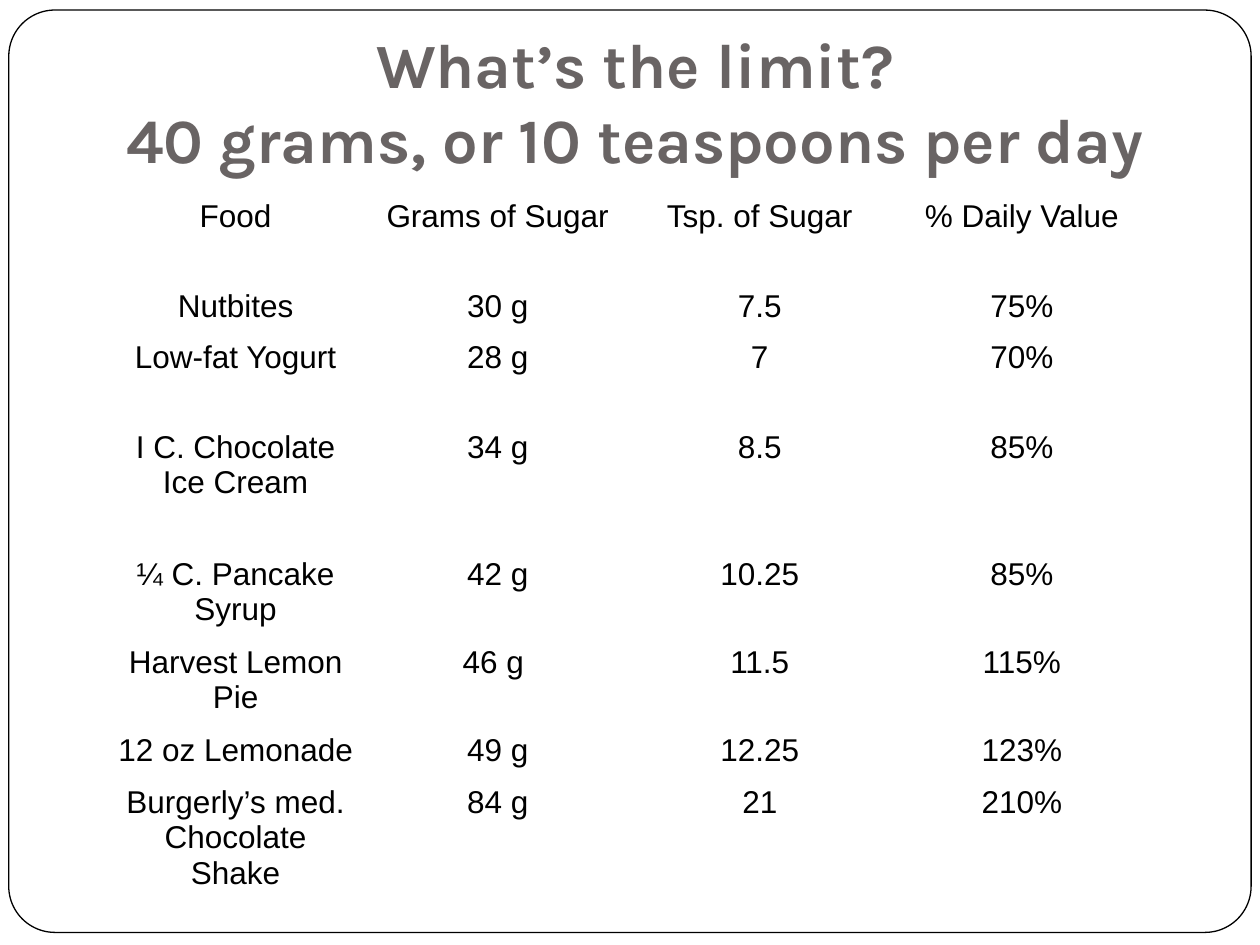
from pptx import Presentation
from pptx.dml.color import RGBColor
from pptx.enum.shapes import MSO_SHAPE
from pptx.enum.text import MSO_ANCHOR, PP_ALIGN
from pptx.util import Inches, Pt

ROUNDED = MSO_SHAPE.ROUNDED_RECTANGLE
BOTTOM = MSO_ANCHOR.BOTTOM
CENTER = PP_ALIGN.CENTER

WIDTH, HEIGHT = 10, 7.5
HEADING = "What’s the limit?\v40 grams, or 10 teaspoons per day"
FOODS = [
    ("Food", "Grams of Sugar", "Tsp. of Sugar", "% Daily Value"),
    ("Nutbites", "30 g", "7.5", "75%"),
    ("Low-fat Yogurt", "28 g", "7", "70%"),
    ("I C. Chocolate Ice Cream", "34 g", "8.5", "85%"),
    ("¼ C. Pancake Syrup", "42 g", "10.25", "85%"),
    ("Harvest Lemon Pie", "46 g ", "11.5", "115%"),
    ("12 oz Lemonade", "49 g", "12.25", "123%"),
    ("Burgerly’s med. Chocolate Shake", "84 g", "21", "210%"),
]
COLUMN_WIDTH, ROW_HEIGHT = 2.08, 0.41
TALL_ROWS = {0: 0.71, 2: 0.71, 3: 1.01}


def rgb(color):
    return RGBColor.from_string(color)


def style(frame, font, size, color, bold):
    for paragraph in frame.paragraphs:
        paragraph.alignment = CENTER
        for run in paragraph.runs:
            run.font.name = font
            run.font.size = Pt(size)
            run.font.bold = bold
            run.font.color.rgb = rgb(color)


def add_border(slide):
    margin = 0.07
    border = slide.shapes.add_shape(
        ROUNDED, Inches(margin), Inches(0.08),
        Inches(WIDTH - 2 * margin), Inches(7.32))
    border.adjustments[0] = 0.05
    border.shadow.inherit = False
    border.fill.solid()
    border.fill.fore_color.rgb = rgb("FFFFFF")
    border.line.color.rgb = rgb("000000")
    border.line.width = Pt(0.75)


def add_heading(slide):
    heading = slide.shapes.add_textbox(
        Inches(0.5), Inches(0.25), Inches(9.08), Inches(1.25)).text_frame
    heading.word_wrap = True
    heading.vertical_anchor = BOTTOM
    heading.margin_bottom = Inches(0.1)
    heading.text = HEADING
    style(heading, "Karla", 36, "696464", True)


def add_foods(slide):
    heights = [TALL_ROWS.get(i, ROW_HEIGHT) for i in range(len(FOODS))]
    columns = len(FOODS[0])
    foods = slide.shapes.add_table(
        len(FOODS), columns, Inches(0.83), Inches(1.53),
        Inches(columns * COLUMN_WIDTH), Inches(sum(heights))).table
    foods.first_row = foods.horz_banding = False
    for row, height, values in zip(foods.rows, heights, FOODS):
        row.height = Inches(height)
        for cell, value in zip(row.cells, values):
            cell.fill.background()
            cell.text_frame.text = value
            style(cell.text_frame, "Arial", 18, "000000", False)


def main():
    deck = Presentation()
    deck.slide_width, deck.slide_height = Inches(WIDTH), Inches(HEIGHT)
    slide = deck.slides.add_slide(deck.slide_layouts[6])
    add_border(slide)
    add_heading(slide)
    add_foods(slide)
    deck.save("out.pptx")


if __name__ == "__main__":
    main()
